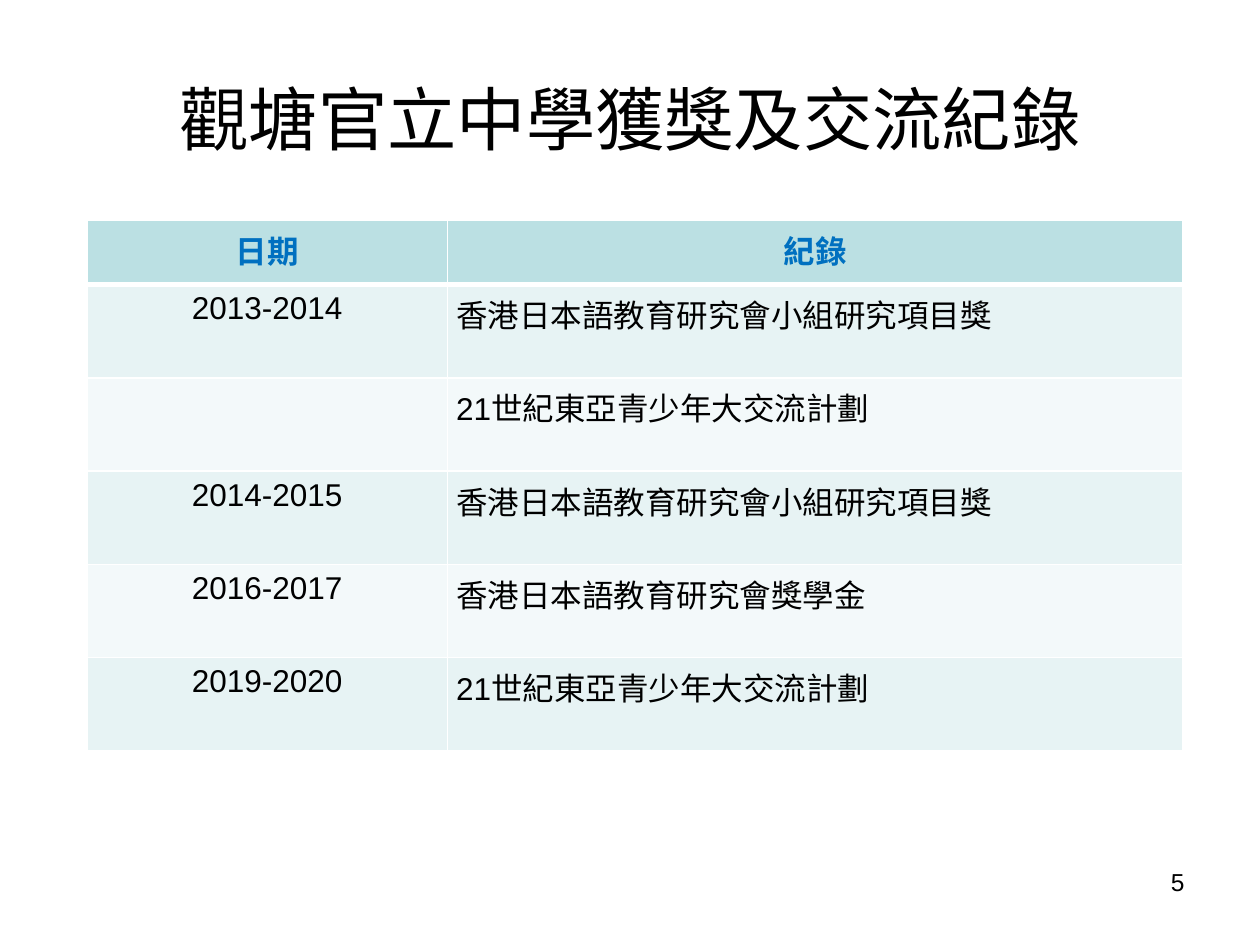
from lxml import etree
from pptx import Presentation
from pptx.dml.color import RGBColor
from pptx.enum.text import MSO_ANCHOR, MSO_AUTO_SIZE, PP_ALIGN
from pptx.oxml.ns import qn
from pptx.util import Inches, Pt

TOP = MSO_ANCHOR.TOP
NO_AUTOFIT = MSO_AUTO_SIZE.NONE
LEFT, CENTER, RIGHT = PP_ALIGN.LEFT, PP_ALIGN.CENTER, PP_ALIGN.RIGHT

BLACK = RGBColor(0x00, 0x00, 0x00)
WHITE = RGBColor(0xFF, 0xFF, 0xFF)
BLUE = RGBColor(0x00, 0x70, 0xC0)
HEADER_FILL = RGBColor(0xBB, 0xE0, 0xE3)
BAND_FILLS = [RGBColor(0xF3, 0xF9, 0xFA), RGBColor(0xE7, 0xF3, 0xF4)]

RECORDS = [
    ("日期", "紀錄"),
    ("2013-2014", "香港日本語教育研究會小組研究項目獎"),
    ("", "21世紀東亞青少年大交流計劃"),
    ("2014-2015", "香港日本語教育研究會小組研究項目獎"),
    ("2016-2017", "香港日本語教育研究會獎學金"),
    ("2019-2020", "21世紀東亞青少年大交流計劃"),
]


def add_run(paragraph, text, size, color=BLACK, bold=False):
    run = paragraph.add_run()
    run.text = text
    run.font.name = "Arial"
    run.font.size = Pt(size)
    run.font.bold = bold
    run.font.color.rgb = color


def set_borders(cell, widths):
    """Draw white cell borders; widths maps the side (L, R, T, B) to points."""
    properties = cell._tc.get_or_add_tcPr()
    for position, (side, width) in enumerate(widths.items()):
        line = etree.Element(qn(f"a:ln{side}"), w=str(Pt(width)))
        fill = etree.SubElement(line, qn("a:solidFill"))
        etree.SubElement(fill, qn("a:srgbClr"), val=str(WHITE))
        properties.insert(position, line)


prs = Presentation()
prs.slide_width, prs.slide_height = Inches(10), Inches(7.5)
slide = prs.slides.add_slide(prs.slide_layouts[5])

title = slide.shapes.title
title.left, title.top = Inches(0.69), Inches(0.68)
title.width, title.height = Inches(8.62), Inches(1.34)
title_frame = title.text_frame
title_frame.auto_size = NO_AUTOFIT
title_frame.vertical_anchor = TOP
title_frame.margin_top = 0
heading = title_frame.paragraphs[0]
heading.alignment = CENTER
heading.line_spacing = 0.9
add_run(heading, "觀塘官立中學獲獎及交流紀錄", 39.6)

table = slide.shapes.add_table(
    len(RECORDS), 2, Inches(0.69), Inches(1.75), Inches(8.7), Inches(4.21)
).table
table.columns[0].width = Inches(2.86)
table.columns[1].width = Inches(5.84)

for row, record in enumerate(RECORDS):
    is_header = row == 0
    table.rows[row].height = Inches(0.51 if is_header else 0.74)
    for column, text in enumerate(record):
        cell = table.cell(row, column)
        cell.margin_left = cell.margin_right = Inches(0.07)
        cell.margin_top = cell.margin_bottom = Inches(0.05)
        cell.fill.solid()
        cell.fill.fore_color.rgb = HEADER_FILL if is_header else BAND_FILLS[row % 2]
        set_borders(cell, {
            "L": 1, "R": 1,
            "T": 3 if row == 1 else 1,
            "B": 3 if is_header else 1,
        })
        entry = cell.text_frame.paragraphs[0]
        entry.alignment = CENTER if is_header or column == 0 else LEFT
        if text:
            add_run(entry, text, 18, BLUE if is_header else BLACK, is_header)

page_number = slide.shapes.add_textbox(
    Inches(7.17), Inches(6.83), Inches(2.33), Inches(0.52)
).text_frame
page_number.word_wrap = True
page_number.paragraphs[0].alignment = RIGHT
add_run(page_number.paragraphs[0], "5", 14)

prs.save("out.pptx")
